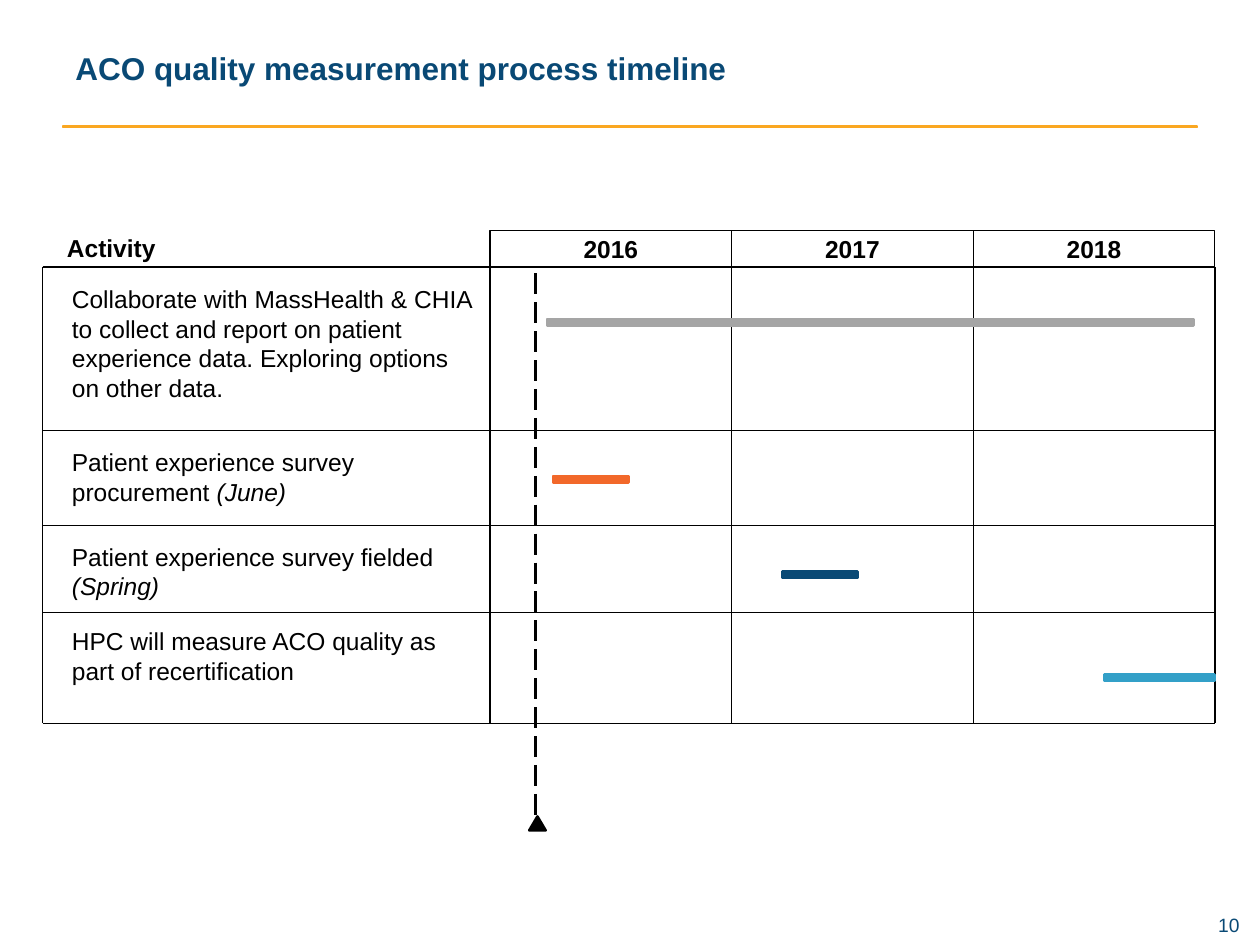
from lxml import etree
from pptx import Presentation
from pptx import util as u
from pptx.dml.color import RGBColor
from pptx.enum import dml, shapes, text
from pptx.oxml.ns import qn

COLORS = {
    "black": "000000", "white": "FFFFFF", "navy": "094975", "gold": "FAA721",
    "gray": "A5A5A5", "orange": "F2682A", "sky": "33A0C8",
}
NO_INSET = dict.fromkeys(["margin_left", "margin_top", "margin_right", "margin_bottom"], 0)

# Grid of the timeline, in cm
LEFT, YEARS_LEFT, YEAR_W = 0.86, 9.88, 4.87
HEAD_TOP, HEAD_H = 4.65, 0.73
YEARS = ["2016", "2017", "2018"]
RIGHT = YEARS_LEFT + YEAR_W * len(YEARS)
ROWS_TOP, ROWS_BOTTOM = HEAD_TOP + HEAD_H, 14.58
ROW_RULES = [8.68, 10.59, 12.35]

# Text top, text height, runs (text, italic), bar left, bar top, bar width, bar colour
ACTIVITIES = [
    (5.61, 2.64, [("Collaborate with MassHealth & CHIA to collect and report on patient "
                   "experience data. Exploring options on other data.", False)],
     11.03, 6.43, 13.03, "gray"),
    (8.89, 1.45, [("Patient experience survey procurement ", False), ("(June)", True)],
     11.15, 9.6, 1.52, "orange"),
    (10.8, 1.45, [("Patient experience survey fielded ", False), ("(Spring)", True)],
     15.77, 11.52, 1.52, "navy"),
    (12.5, 1.45, [("HPC will measure ACO quality as part of recertification", False)],
     22.27, 13.6, 2.22, "sky"),
]


def rgb(name):
    return RGBColor.from_string(COLORS[name])


def write(s, runs, size, color="black", bold=False, align=text.PP_ALIGN.LEFT, **frame):
    tf = s.text_frame
    for name, value in frame.items():
        setattr(tf, name, value)
    p = tf.paragraphs[0]
    p.alignment = align
    for words, italic in runs:
        r = p.add_run()
        r.text = words
        font = {"name": "Arial", "size": u.Pt(size), "bold": bold, "italic": italic}
        for name, value in font.items():
            setattr(r.font, name, value)
        r.font.color.rgb = rgb(color)


def add_text(sp, box, runs, size, **style):
    s = sp.add_textbox(*map(u.Cm, box))
    write(s, runs, size, word_wrap=True, **style)


def add_box(sp, box, fill, line, width, kind=shapes.MSO_SHAPE.RECTANGLE):
    s = sp.add_shape(kind, *map(u.Cm, box))
    s.shadow.inherit = False
    s.fill.solid()
    s.fill.fore_color.rgb = rgb(fill)
    s.line.color.rgb = rgb(line)
    s.line.width = u.Pt(width)
    return s


def add_line(sp, x1, y1, x2, y2, width=0.75, dash=None):
    s = sp.add_connector(shapes.MSO_CONNECTOR.STRAIGHT, *map(u.Cm, (x1, y1, x2, y2)))
    s.line.color.rgb = rgb("black")
    s.line.width = u.Pt(width)
    if dash:
        s.line.dash_style = dash
    etree.SubElement(s._element.spPr, qn("a:effectLst"))


def add_header(sp):
    add_text(sp, (1.35, 4.72, 2.5, 0.58), [("Activity", False)], 14, bold=True,
             vertical_anchor=text.MSO_ANCHOR.BOTTOM, **NO_INSET)
    for i, year in enumerate(YEARS):
        box = (YEARS_LEFT + i * YEAR_W, HEAD_TOP, YEAR_W, HEAD_H)
        s = add_box(sp, box, "white", "black", 0.75)
        write(s, [(year, False)], 14, bold=True, align=text.PP_ALIGN.CENTER,
              word_wrap=False, vertical_anchor=text.MSO_ANCHOR.MIDDLE, **NO_INSET)


def add_grid(sp):
    # Outer frame and the edge of the activity column
    for y in (ROWS_TOP, ROWS_BOTTOM):
        add_line(sp, LEFT, y, RIGHT, y)
    for x in (LEFT, YEARS_LEFT, RIGHT):
        add_line(sp, x, ROWS_TOP, x, ROWS_BOTTOM)
    # Inner rules
    for i in range(1, len(YEARS)):
        x = YEARS_LEFT + i * YEAR_W
        add_line(sp, x, ROWS_TOP, x, ROWS_BOTTOM, 0.25)
    for y in ROW_RULES:
        add_line(sp, LEFT, y, RIGHT, y, 0.25)


def main():
    prs = Presentation()
    prs.slide_width, prs.slide_height = u.Cm(25.4), u.Cm(19.05)
    sp = prs.slides.add_slide(prs.slide_layouts[6]).shapes

    # Title, rule and page number
    add_box(sp, (1.27, 2.54, 22.86, 0.03), "gold", "gold", 1)
    add_text(sp, (1.27, 0.42, 22.86, 1.9),
             [("ACO quality measurement process timeline", False)], 18,
             color="navy", bold=True, vertical_anchor=text.MSO_ANCHOR.MIDDLE)
    add_text(sp, (18.85, 18.42, 6.14, 0.48), [("10", False)], 11, color="navy",
             align=text.PP_ALIGN.RIGHT, **NO_INSET)

    # Timeline table
    add_header(sp)
    add_grid(sp)

    # Today marker
    add_line(sp, 10.8, 5.51, 10.8, 16.51, 1.5, dml.MSO_LINE.LONG_DASH)
    add_box(sp, (10.67, 16.46, 0.33, 0.28), "black", "black", 1.5,
            shapes.MSO_SHAPE.ISOSCELES_TRIANGLE)

    # Activities with their bars
    for top, height, runs, bar_left, bar_top, bar_width, color in ACTIVITIES:
        add_text(sp, (1.2, top, 8.69, height), runs, 14)
        add_box(sp, (bar_left, bar_top, bar_width, 0.13), color, color, 1.5)

    prs.save("out.pptx")


if __name__ == "__main__":
    main()
